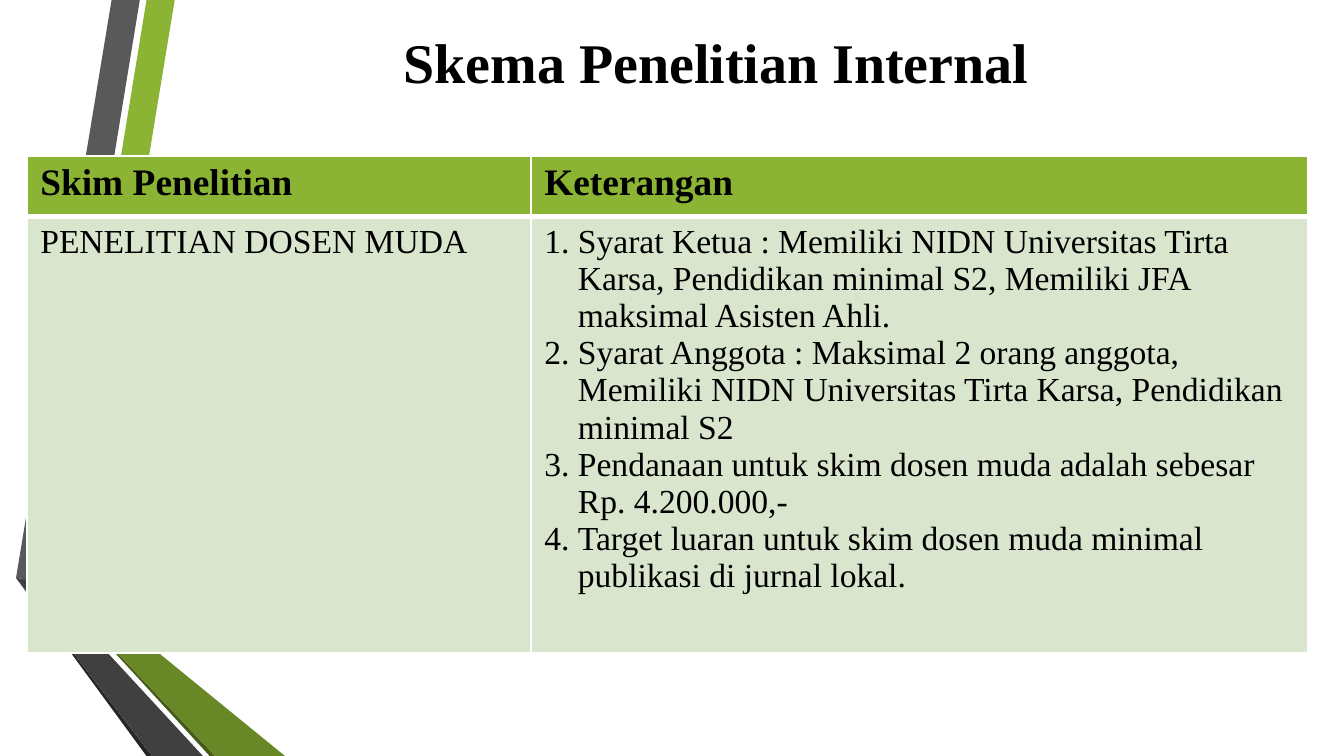
from pptx import Presentation
from pptx.dml.color import RGBColor
from pptx.enum.text import MSO_ANCHOR, PP_ALIGN
from pptx.oxml import parse_xml
from pptx.oxml.ns import nsdecls
from pptx.util import Pt


def color(fmt, code):
    fmt.rgb = RGBColor.from_string(code)


def style(para, size, bold):
    para.font.name = "Times New Roman"
    para.font.size = Pt(size)
    para.font.bold = bold
    color(para.font.color, "000000")


deck = Presentation()
deck.slide_width, deck.slide_height = Pt(720), Pt(405)
slide = deck.slides.add_slide(deck.slide_layouts[6])

# Folded ribbons on the left
ribbons = [
    ("8BB434", [(27.4, 312.5), (41.8, 314.6), (93.6, 0), (78.5, 0)]),
    ("595959", [(74.9, 0), (59.8, 0), (8.6, 309.6), (23.8, 311.8)]),
    ("262626", [(8.6, 309.6), (78.5, 405), (81.4, 405)]),
    ("465A1A", [(27.4, 312.5), (112.3, 405), (115.2, 405)]),
    ("688727", [(27.4, 312.5), (115.2, 405), (152.6, 405), (41.8, 314.6)]),
    ("404040", [(108.7, 405), (25.9, 315.4), (23, 311.8), (8.6, 309.6),
                (81.4, 405)]),
]
for code, points in ribbons:
    first, *rest = [(Pt(x), Pt(y)) for x, y in points]
    path = slide.shapes.build_freeform(*first)
    path.add_line_segments(rest, close=True)
    ribbon = path.convert_to_shape()
    ribbon.shadow.inherit = False
    ribbon.fill.solid()
    color(ribbon.fill.fore_color, code)
    ribbon.line.fill.background()

# Title
title = slide.shapes.add_textbox(Pt(87.8), Pt(10.1), Pt(591.8), Pt(45.4))
frame = title.text_frame
frame.word_wrap = True
frame.vertical_anchor = MSO_ANCHOR.MIDDLE
para = frame.paragraphs[0]
para.text = "Skema Penelitian Internal"
para.alignment = PP_ALIGN.CENTER
style(para, 30, True)

# Table of schemes
rows = [
    [["Skim Penelitian"], ["Keterangan"]],
    [["PENELITIAN DOSEN MUDA"], [
        "Syarat Ketua : Memiliki NIDN Universitas Tirta Karsa, "
        "Pendidikan minimal S2, Memiliki JFA maksimal Asisten Ahli.",
        "Syarat Anggota : Maksimal 2 orang anggota, Memiliki NIDN "
        "Universitas Tirta Karsa, Pendidikan minimal S2",
        "Pendanaan untuk skim dosen muda adalah sebesar Rp. 4.200.000,-",
        "Target luaran untuk skim dosen muda minimal publikasi di jurnal lokal.",
    ]],
]
table = slide.shapes.add_table(
    2, 2, Pt(14.4), Pt(83.5), Pt(686), Pt(266.4)).table
for col, width in zip(table.columns, (270, 416)):
    col.width = Pt(width)
for row, height in zip(table.rows, (32.4, 234)):
    row.height = Pt(height)

for r, row in enumerate(rows):
    head = r == 0
    for c, lines in enumerate(row):
        cell = table.cell(r, c)
        cell.fill.solid()
        color(cell.fill.fore_color, "8BB434" if head else "DAE5CE")
        cell.text = "\n".join(lines)
        for para in cell.text_frame.paragraphs:
            style(para, 20 if head else 18, head)
            # Numbered list with a hanging indent
            if len(lines) > 1:
                props = para._p.get_or_add_pPr()
                props.set("marL", str(Pt(18)))
                props.set("indent", str(-Pt(18)))
                props.insert(0, parse_xml(
                    f'<a:buAutoNum {nsdecls("a")} type="arabicPeriod"/>'))
        # White borders, thick under the header
        thick = "B" if head else "T"
        for i, side in enumerate("LRTB"):
            width = Pt(3 if side == thick else 1)
            cell._tc.get_or_add_tcPr().insert(i, parse_xml(
                f'<a:ln{side} {nsdecls("a")} w="{width}"><a:solidFill>'
                f'<a:srgbClr val="FFFFFF"/></a:solidFill></a:ln{side}>'))

deck.save("out.pptx")
